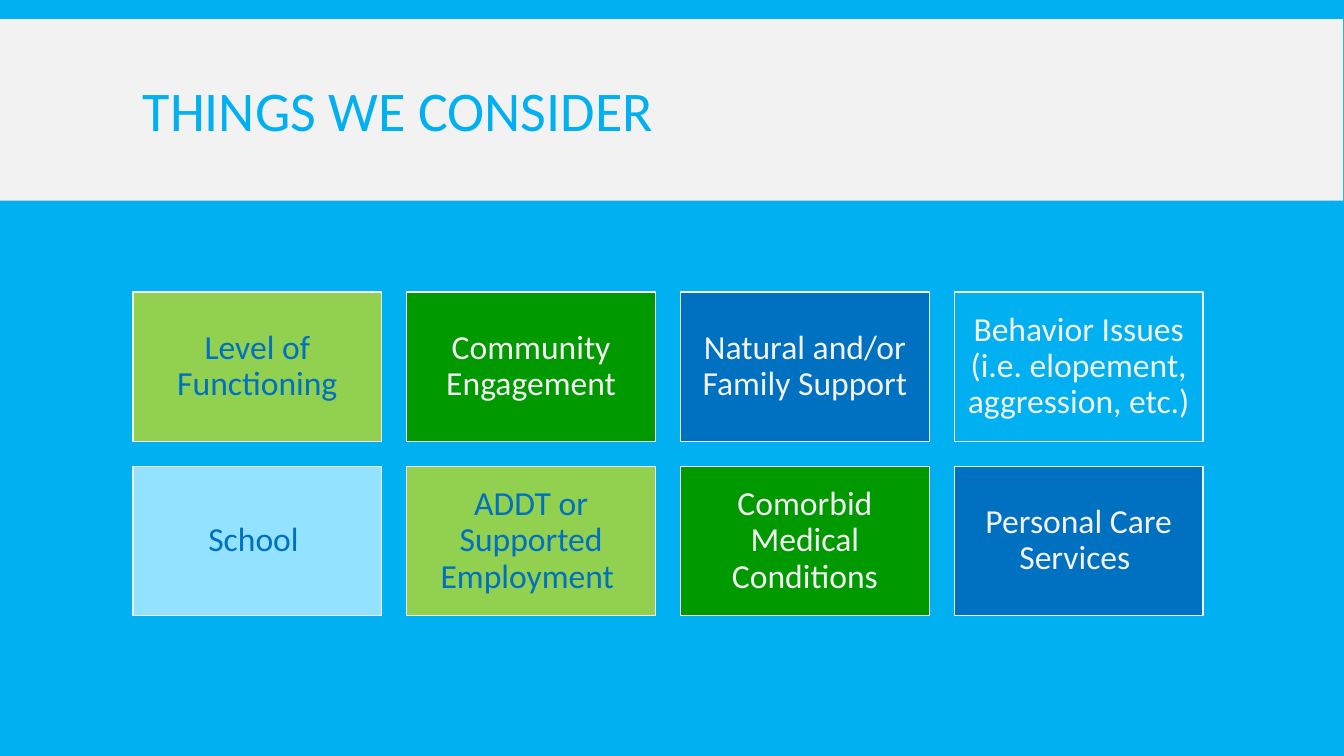
from dataclasses import dataclass

from pptx import Presentation
from pptx import util as u
from pptx.dml import color
from pptx.enum import shapes, text


@dataclass(frozen=True)
class Theme:
    font: str = "Calibri"
    title_size: int = 40
    card_size: int = 24
    sky: str = "00B0F0"
    pale: str = "F2F2F2"
    lime: str = "92D050"
    green: str = "009900"
    blue: str = "0070C0"
    ice: str = "93E2FF"


theme = Theme()


def add_box(page, left, top, width, height, fill):
    box = page.shapes.add_shape(
        shapes.MSO_SHAPE.RECTANGLE, u.Cm(left), u.Cm(top), u.Cm(width), u.Cm(height)
    )
    box.shadow.inherit = False
    box.fill.solid()
    box.fill.fore_color.rgb = color.RGBColor.from_string(fill)
    box.line.fill.background()
    return box


def write(box, wording, size, ink, align, spacing):
    frame = box.text_frame
    frame.word_wrap = True
    frame.vertical_anchor = text.MSO_ANCHOR.MIDDLE
    frame.margin_left = frame.margin_right = u.Cm(0.25)
    para = frame.paragraphs[0]
    para.alignment = align
    para.line_spacing = spacing
    span = para.add_run()
    span.text = wording
    span.font.name = theme.font
    span.font.size = u.Pt(size)
    span.font.color.rgb = color.RGBColor.from_string(ink)


deck = Presentation()
deck.slide_width = u.Cm(33.87)
deck.slide_height = u.Cm(19.05)
page = deck.slides.add_slide(deck.slide_layouts[6])
page.background.fill.solid()
page.background.fill.fore_color.rgb = color.RGBColor.from_string(theme.sky)

add_box(page, 0, 0.48, 33.85, 4.58, theme.pale)
title = page.shapes.add_textbox(u.Cm(3.35), u.Cm(0.79), u.Cm(27.18), u.Cm(4.19))
write(title, "THINGS WE CONSIDER", theme.title_size, theme.sky, text.PP_ALIGN.LEFT, 0.85)

cards = [
    ("Level of Functioning", theme.lime, theme.blue),
    ("Community Engagement", theme.green, theme.pale),
    ("Natural and/or Family Support", theme.blue, theme.pale),
    ("Behavior Issues (i.e. elopement, aggression, etc.)", theme.sky, theme.pale),
    ("School ", theme.ice, theme.blue),
    ("ADDT or Supported Employment ", theme.lime, theme.blue),
    ("Comorbid Medical Conditions", theme.green, theme.pale),
    ("Personal Care Services ", theme.blue, theme.pale),
]
columns = 4
card_width, card_height, gap = 6.27, 3.76, 0.63

for index, (wording, fill, ink) in enumerate(cards):
    row, column = divmod(index, columns)
    left = 3.35 + column * (card_width + gap)
    top = 7.36 + row * (card_height + gap)
    card = add_box(page, left, top, card_width, card_height, fill)
    card.line.color.rgb = color.RGBColor.from_string(theme.pale)
    card.line.width = u.Pt(1)
    write(card, wording, theme.card_size, ink, text.PP_ALIGN.CENTER, 0.9)

deck.save("out.pptx")
